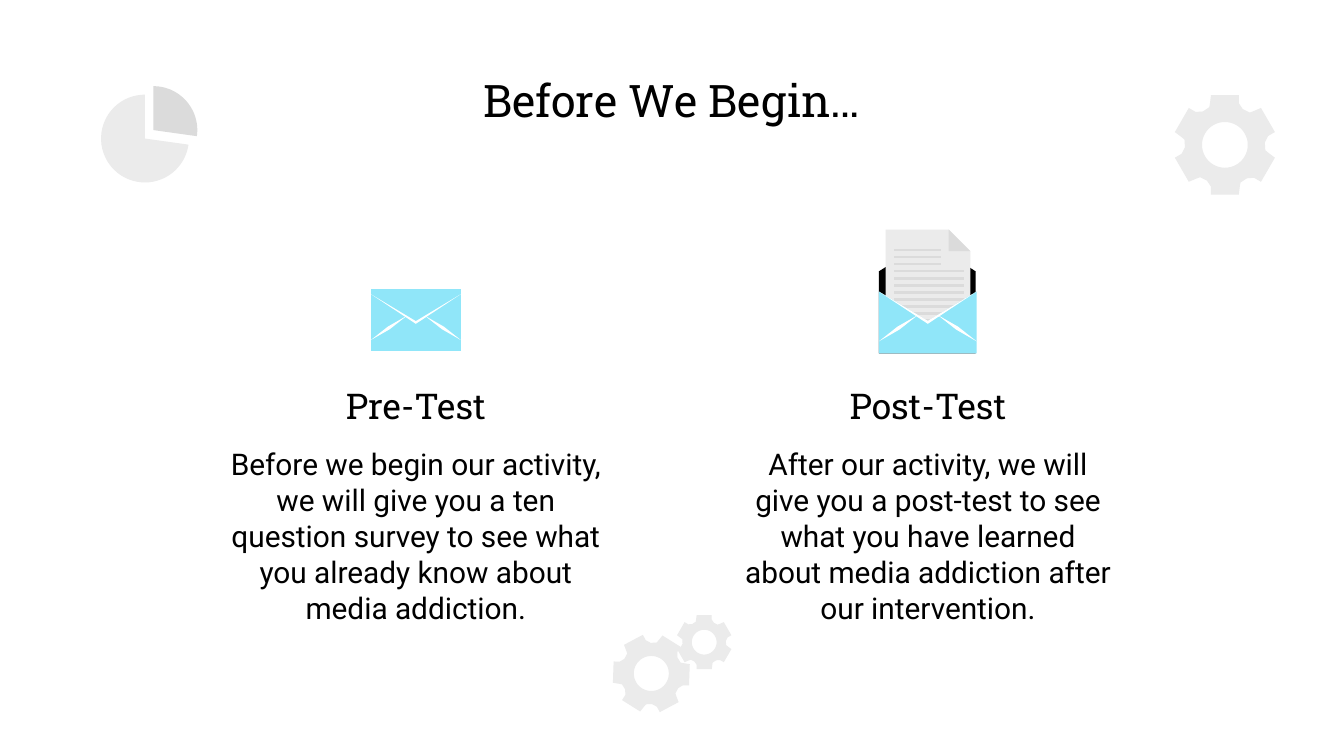
import math
import pptx
import pptx.dml.color
import pptx.enum.text
import pptx.util

TITLE = "Before We Begin…"
COLUMNS = [
    (4.09, "Pre-Test",
     "Before we begin our activity, we will give you a ten question survey "
     "to see what you already know about media addiction."),
    (13.77, "Post-Test",
     "After our activity, we will give you a post-test to see what you have "
     "learned about media addiction after our intervention."),
]
COLUMN_WIDTH = 7.54

BLACK, WHITE, BLUE = "000000", "FFFFFF", "90E6F9"
PALE, GREY = "EBEBEB", "DBDBDB"

GEARS = [(23.15, 2.74, 0.94, 0), (12.31, 12.73, 0.72, 32), (13.31, 12.14, 0.51, 0)]
TOOTH = [(-0.28, -1), (0.28, -1), (0.28, -0.84), (0.36, -0.72), (0.5, -0.65), (0.58, -0.68)]
GEAR_HOLE = 0.46
PIE_RADIUS = 0.83
PIE_PARTS = [(2.74, 2.62, 8, 270, PALE), (2.9, 2.46, -90, 8, GREY)]

FLAP = [(0, 0), (0.5, 0.33), (1, 0), (0.5, 0.3)]
SEAM = [(0, 0.51), (0.19, 0.36), (0.4, 0.24), (0.21, 0.39)]
LINE_WIDTHS = [0.89] * 3 + [1.32] * 9


def rgb(code):
    return pptx.dml.color.RGBColor.from_string(code)


def emu(points):
    return [(pptx.util.Cm(x), pptx.util.Cm(y)) for x, y in points]


def draw(shapes, color, *contours):
    first, *others = [emu(contour) for contour in contours]
    builder = shapes.build_freeform(*first[0])
    builder.add_line_segments(first[1:])
    for contour in others:
        builder.move_to(*contour[0])
        builder.add_line_segments(contour[1:])
    outline = builder.convert_to_shape()
    outline.shadow.inherit = False
    outline.fill.solid()
    outline.fill.fore_color.rgb = rgb(color)
    outline.line.fill.background()


def box(left, top, width, height):
    return [(left, top), (left + width, top),
            (left + width, top + height), (left, top + height)]


def arc(x, y, radius, start, end, steps=48):
    angles = [math.radians(start + (end - start) * i / steps) for i in range(steps + 1)]
    return [(x + radius * math.cos(a), y + radius * math.sin(a)) for a in angles]


def draw_gear(shapes, x, y, radius, turn):
    rim = []
    for tooth in range(6):
        angle = math.radians(turn + 60 * tooth)
        cos, sin = math.cos(angle), math.sin(angle)
        rim += [(x + radius * (u * cos - v * sin), y + radius * (u * sin + v * cos))
                for u, v in TOOTH]
    draw(shapes, PALE, rim, arc(x, y, radius * GEAR_HOLE, 360, 0))


def draw_folds(shapes, left, top, width):
    for fold in (FLAP, SEAM, [(1 - u, v) for u, v in SEAM]):
        draw(shapes, WHITE, [(left + width * u, top + width * v) for u, v in fold])


def draw_closed_envelope(shapes, left, top, width, height):
    draw(shapes, BLUE, box(left, top, width, height))
    draw_folds(shapes, left, top + 0.1, width)


def draw_open_envelope(shapes, left, top, width, height):
    right, bottom, middle = left + width, top + height, left + width / 2
    draw(shapes, BLACK, [(middle, top - 0.96), (left, top - 0.38), (left, bottom),
                         (right - 0.02, bottom), (right - 0.02, top - 0.38)])
    paper_left, paper_right, paper_top, fold = left + 0.13, right - 0.12, top - 1.17, 0.41
    draw(shapes, PALE, [(paper_left, paper_top), (paper_left, bottom - 0.25),
                        (paper_right, bottom - 0.25), (paper_right, paper_top + fold),
                        (paper_right - fold, paper_top)])
    draw(shapes, GREY, [(paper_right - fold, paper_top),
                        (paper_right - fold, paper_top + fold),
                        (paper_right, paper_top + fold)])
    pitch = 1.47 / (len(LINE_WIDTHS) - 1)
    for row, line_width in enumerate(LINE_WIDTHS):
        draw(shapes, GREY, box(left + 0.28, top - 0.81 + row * pitch, line_width, 0.05))
    draw(shapes, BLUE, [(left, top), (left, bottom), (right, bottom),
                        (right, top), (middle, top + 0.56)])
    draw_folds(shapes, left, top, width)


def write(holder, text, place, size, font, anchor, space_after=0):
    holder.left, holder.top, holder.width, holder.height = map(pptx.util.Cm, place)
    frame = holder.text_frame
    frame.word_wrap = True
    frame.auto_size = pptx.enum.text.MSO_AUTO_SIZE.NONE
    frame.vertical_anchor = anchor
    frame.margin_left = frame.margin_right = pptx.util.Cm(0.25)
    frame.margin_top = frame.margin_bottom = pptx.util.Cm(0.25)
    paragraph = frame.paragraphs[0]
    paragraph.alignment = pptx.enum.text.PP_ALIGN.CENTER
    paragraph.space_after = pptx.util.Pt(space_after)
    run = paragraph.add_run()
    run.text = text
    run.font.size = pptx.util.Pt(size)
    run.font.name = font
    run.font.color.rgb = rgb(BLACK)


def main():
    deck = pptx.Presentation()
    deck.slide_width, deck.slide_height = pptx.util.Cm(25.4), pptx.util.Cm(14.29)
    slide = deck.slides.add_slide(deck.slide_layouts[5])
    shapes = slide.shapes
    top, middle = pptx.enum.text.MSO_ANCHOR.TOP, pptx.enum.text.MSO_ANCHOR.MIDDLE

    for gear in GEARS:
        draw_gear(shapes, *gear)
    for x, y, start, end, color in PIE_PARTS:
        draw(shapes, color, [(x, y)] + arc(x, y, PIE_RADIUS, start, end))

    write(shapes.title, TITLE, (1.98, 1.52, 21.44, 0.71), 24, "Roboto Slab", middle)
    draw_closed_envelope(shapes.add_group_shape().shapes, 7.01, 5.46, 1.7, 1.17)
    draw_open_envelope(shapes.add_group_shape().shapes, 16.61, 5.51, 1.85, 1.17)
    for left, heading, body in COLUMNS:
        write(shapes.add_textbox(0, 0, 0, 0), heading,
              (left, 7.16, COLUMN_WIDTH, 0.99), 19, "Roboto Slab", middle)
        write(shapes.add_textbox(0, 0, 0, 0), body,
              (left, 8.18, COLUMN_WIDTH, 3.18), 16, "Roboto", top, 16)

    deck.save("out.pptx")


if __name__ == "__main__":
    main()
